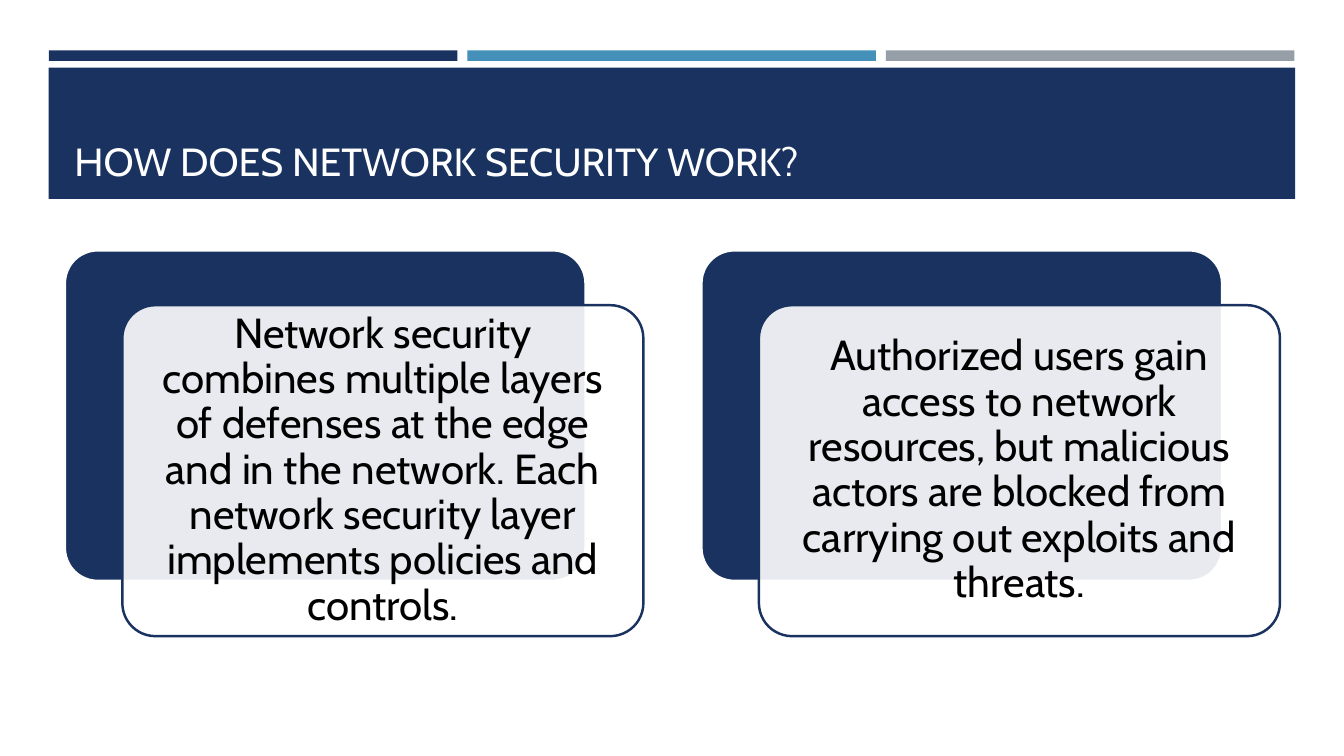
from lxml import etree
from pptx import Presentation
from pptx.dml.color import RGBColor
from pptx.enum.shapes import MSO_SHAPE
from pptx.enum.text import MSO_ANCHOR, PP_ALIGN
from pptx.oxml.ns import qn
from pptx.util import Pt

RECTANGLE = MSO_SHAPE.RECTANGLE
ROUNDED = MSO_SHAPE.ROUNDED_RECTANGLE
COLORS = {"navy": "1A3260", "blue": "4590B8", "gray": "969FA7",
          "white": "FFFFFF", "black": "000000"}
FONT = "Cabin"


def add_block(kind, left, top, width, height, fill, line=None, line_width=0):
    shape = slide.shapes.add_shape(kind, Pt(left), Pt(top), Pt(width), Pt(height))
    shape.shadow.inherit = False
    shape.fill.solid()
    shape.fill.fore_color.rgb = RGBColor.from_string(COLORS[fill])
    if line:
        shape.line.color.rgb = RGBColor.from_string(COLORS[line])
        shape.line.width = Pt(line_width)
    else:
        shape.line.fill.background()
    return shape


def write_text(shape, text, size, color, anchor, alignment):
    frame = shape.text_frame
    frame.word_wrap = True
    frame.vertical_anchor = anchor
    frame.text = text
    paragraph = frame.paragraphs[0]
    paragraph.alignment = alignment
    font = paragraph.runs[0].font
    font.name = FONT
    font.size = Pt(size)
    font.color.rgb = RGBColor.from_string(COLORS[color])
    return frame


presentation = Presentation()
presentation.slide_width = Pt(960)
presentation.slide_height = Pt(540)
slide = presentation.slides.add_slide(presentation.slide_layouts[6])

# Three accent bars across the top
for index, color in enumerate(["navy", "blue", "gray"]):
    add_block(RECTANGLE, 35 + index * 298.9, 36, 291.8, 7.5, color)

# Title band
add_block(RECTANGLE, 34.8, 48.4, 890.4, 93.7, "navy")
title = slide.shapes.add_textbox(Pt(46.1), Pt(55.4), Pt(868.3), Pt(79.9))
write_text(title, "HOW DOES NETWORK SECURITY WORK?", 28, "white",
           MSO_ANCHOR.BOTTOM, PP_ALIGN.LEFT)

# Two cards, each a navy block behind a translucent white panel
CARD_WIDTH, CARD_HEIGHT = 372.2, 236.4
CARD_LEFT, CARD_TOP, CARD_STEP = 46.2, 178.7, 454.7
PANEL_SHIFT_X, PANEL_SHIFT_Y = 41.2, 39.3
card_texts = [
    "Network security combines multiple layers of defenses at the edge and in "
    "the network. Each network security layer implements policies and controls.",
    "Authorized users gain access to network resources, but malicious actors "
    "are blocked from carrying out exploits and threats.",
]
for index, text in enumerate(card_texts):
    left = CARD_LEFT + index * CARD_STEP
    block = add_block(ROUNDED, left, CARD_TOP, CARD_WIDTH, CARD_HEIGHT,
                      "navy", "white", 2)
    panel = add_block(ROUNDED, left + PANEL_SHIFT_X, CARD_TOP + PANEL_SHIFT_Y,
                      CARD_WIDTH, CARD_HEIGHT, "white", "navy", 1.75)
    for shape in (block, panel):
        shape.adjustments[0] = 0.1

    # Panel fill at 90% opacity
    fill_color = panel.fill._xPr.find(qn("a:solidFill"))[0]
    etree.SubElement(fill_color, qn("a:alpha")).set("val", "90000")

    frame = write_text(panel, text, 30, "black", MSO_ANCHOR.MIDDLE, PP_ALIGN.CENTER)
    frame.margin_left = frame.margin_right = Pt(9)
    frame.margin_top = frame.margin_bottom = Pt(9)
    frame.paragraphs[0].line_spacing = 0.9

presentation.save("out.pptx")
